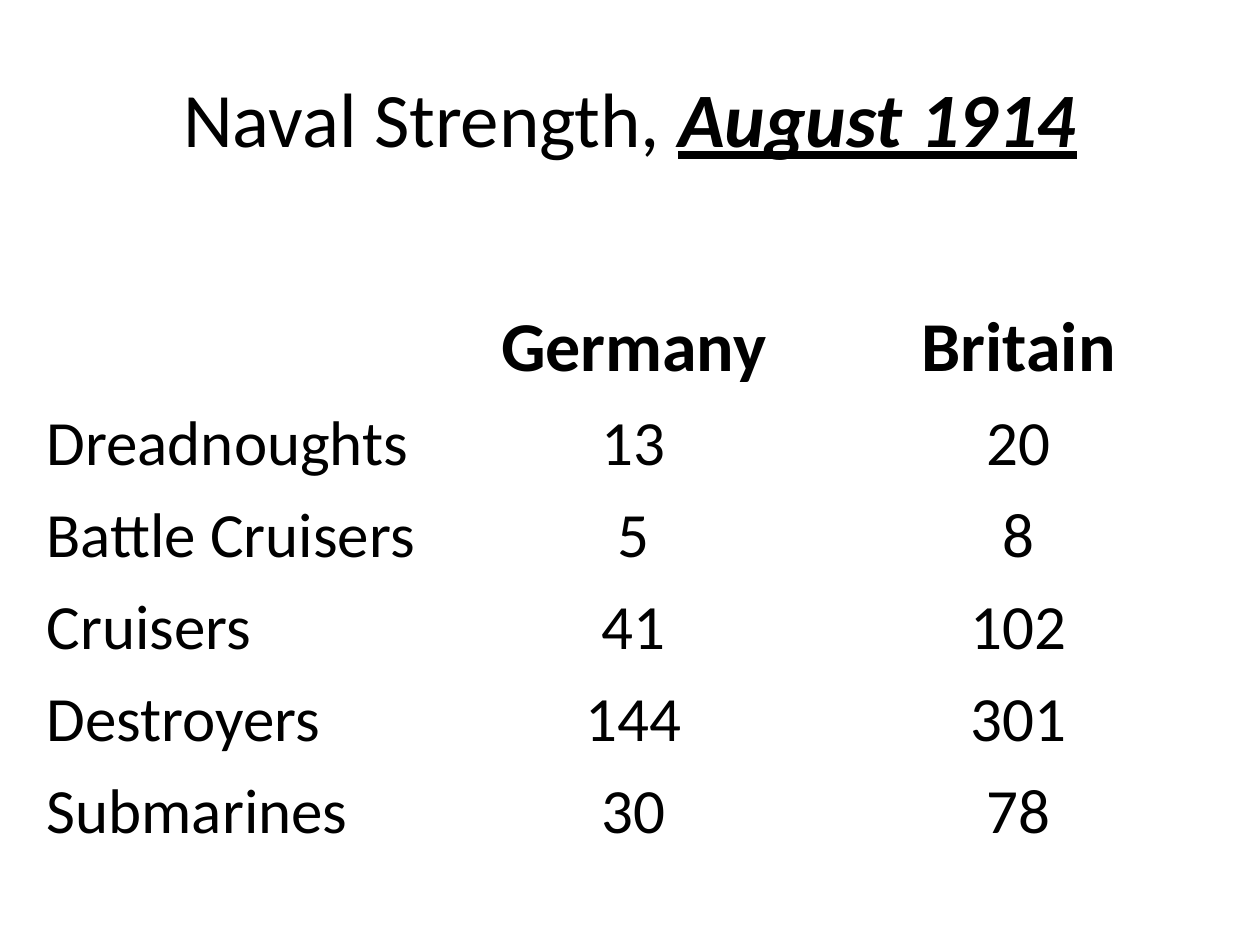
from pptx import Presentation
from pptx import util as u
from pptx.dml.color import RGBColor
from pptx.enum import text

BLACK = RGBColor(0x00, 0x00, 0x00)
WHITE = RGBColor(0xFF, 0xFF, 0xFF)
FONT = "Calibri"
WIDTH, HEIGHT = u.Inches(10), u.Inches(7.5)

COLUMN_WIDTHS = (3.37, 2.82, 3.29)
HEADER_HEIGHT, ROW_HEIGHT = 1.41, 0.73
FLEETS = (
    ("", "Germany", "Britain"),
    ("Dreadnoughts", "13", "20"),
    ("Battle Cruisers", "5", "8"),
    ("Cruisers", "41", "102"),
    ("Destroyers", "144", "301"),
    ("Submarines", "30", "78"),
)


def add_span(para, words, size, bold=False, italic=False, underline=False):
    span = para.add_run()
    span.text = words
    font = span.font
    font.name, font.size = FONT, u.Pt(size)
    font.bold, font.italic, font.underline = bold, italic, underline
    font.color.rgb = BLACK


def add_title(page):
    box = page.shapes.add_textbox(
        int(WIDTH * 0.05), int(HEIGHT * 0.04), int(WIDTH * 0.9), u.Inches(1.25))
    frame = box.text_frame
    frame.word_wrap = True
    frame.vertical_anchor = text.MSO_ANCHOR.MIDDLE
    para = frame.paragraphs[0]
    para.alignment = text.PP_ALIGN.CENTER
    add_span(para, "Naval Strength, ", 44)
    add_span(para, "August 1914", 44, bold=True, italic=True, underline=True)


def fill_cell(cell, words, is_header, is_label):
    cell.fill.solid()
    cell.fill.fore_color.rgb = WHITE
    cell.margin_left = cell.margin_right = u.Inches(0.12)
    cell.margin_top = cell.margin_bottom = u.Inches(0.06)
    # Headings sit at the foot of their tall row
    cell.vertical_anchor = (
        text.MSO_ANCHOR.BOTTOM if is_header else text.MSO_ANCHOR.MIDDLE)
    if words:
        para = cell.text_frame.paragraphs[0]
        para.alignment = text.PP_ALIGN.LEFT if is_label else text.PP_ALIGN.CENTER
        add_span(para, words, 40 if is_header else 36, bold=is_header)


def add_fleet_table(page):
    heights = [HEADER_HEIGHT] + [ROW_HEIGHT] * (len(FLEETS) - 1)
    table = page.shapes.add_table(
        len(FLEETS), len(COLUMN_WIDTHS), u.Inches(0.25), u.Inches(1.75),
        u.Inches(sum(COLUMN_WIDTHS)), u.Inches(sum(heights))).table
    table.first_row = table.horz_banding = False
    for column, width in zip(table.columns, COLUMN_WIDTHS):
        column.width = u.Inches(width)
    for row, height in zip(table.rows, heights):
        row.height = u.Inches(height)
    for r, fleet in enumerate(FLEETS):
        for c, words in enumerate(fleet):
            fill_cell(table.cell(r, c), words, is_header=r == 0, is_label=c == 0)


def main():
    deck = Presentation()
    deck.slide_width, deck.slide_height = WIDTH, HEIGHT
    page = deck.slides.add_slide(deck.slide_layouts[6])
    add_title(page)
    add_fleet_table(page)
    deck.save("out.pptx")


if __name__ == "__main__":
    main()
